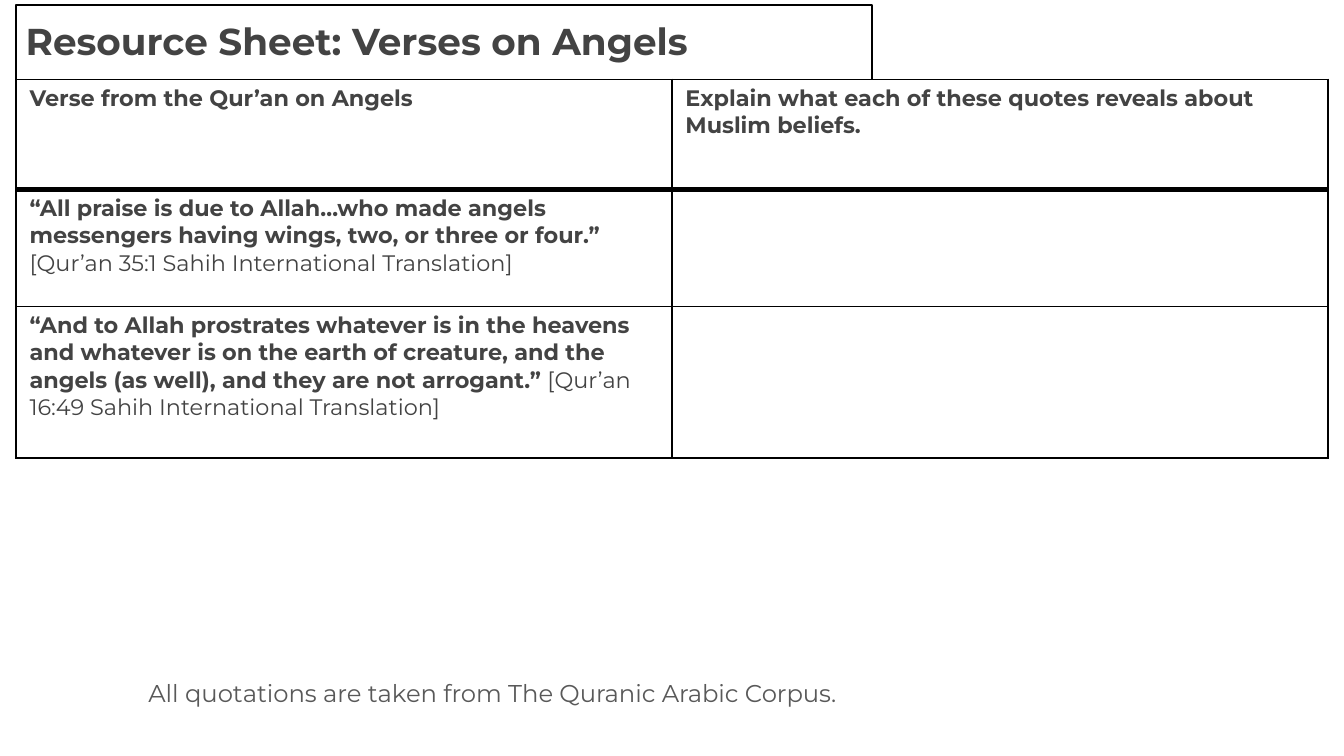
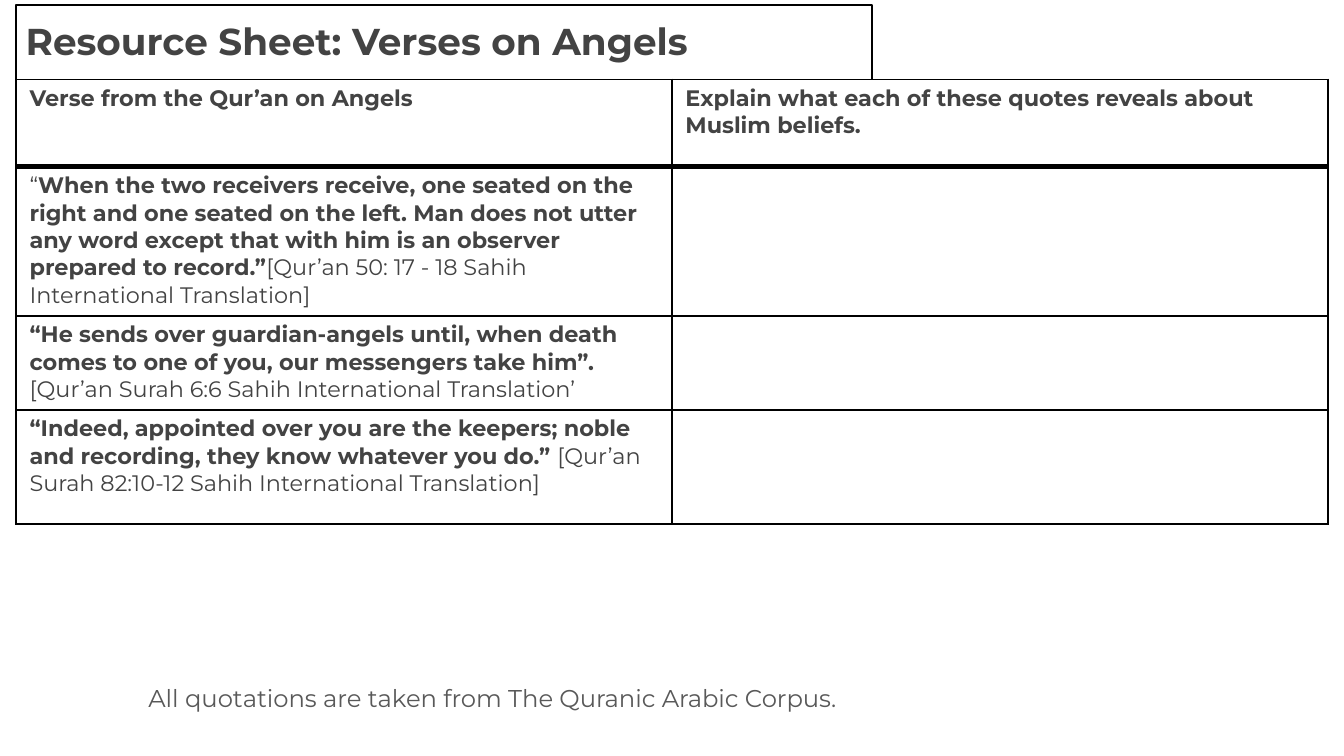
from dataclasses import dataclass

from lxml.etree import SubElement
from pptx import Presentation
from pptx.dml.color import RGBColor
from pptx.enum.text import MSO_ANCHOR, MSO_AUTO_SIZE, PP_ALIGN
from pptx.oxml.ns import qn
from pptx.util import Inches, Pt

# Shared style
COLORS = {"paper": "FFFFFF", "rule": "000000", "ink": "434343", "note": "595959"}
FONT = "Montserrat"
SLIDE_WIDTH = Inches(10)
SLIDE_HEIGHT = SLIDE_WIDTH * 9 // 16
LEFT = Inches(0.12)
COLUMN_WIDTH = Inches(4.88)
THIN, THICK = Pt(1), Pt(3)

# Shared wording
TITLE = "Resource Sheet: Verses on Angels"
HEADINGS = (
    "Verse from the Qur’an on Angels",
    "Explain what each of these quotes reveals about Muslim beliefs.",
)
SOURCE_NOTE = "All quotations are taken from The Quranic Arabic Corpus."


@dataclass(frozen=True)
class Verse:
    height: float
    quote: str
    reference: str
    opening: str = ""  # regular-weight text before the bold quote


@dataclass(frozen=True)
class Sheet:
    heading_height: float
    verses: tuple[Verse, ...]
    note_top: float


SHEETS = (
    Sheet(0.82, (
        Verse(
            0.87,
            "“All praise is due to Allah…who made angels messengers having wings, "
            "two, or three or four.”",
            " [Qur’an 35:1 Sahih International Translation]",
        ),
        Verse(
            1.13,
            "“And to Allah prostrates whatever is in the heavens and whatever is on "
            "the earth of creature, and the angels (as well), and they are not arrogant.”",
            " [Qur’an 16:49 Sahih International Translation]",
        ),
    ), 4.98),
    Sheet(0.65, (
        Verse(
            1.11,
            "When the two receivers receive, one seated on the right and one seated "
            "on the left. Man does not utter any word except that with him is an "
            "observer prepared to record.”",
            "[Qur’an 50: 17 - 18 Sahih International Translation]",
            opening="“",
        ),
        Verse(
            0.7,
            "“He sends over guardian-angels until, when death comes to one of you, "
            "our messengers take him”.",
            " [Qur’an Surah 6:6 Sahih International Translation’",
        ),
        Verse(
            0.85,
            "“Indeed, appointed over you are the keepers; noble and recording, they "
            "know whatever you do.” ",
            "[Qur’an Surah 82:10-12 Sahih International Translation]",
        ),
    ), 5.02),
)


def color(name: str) -> RGBColor:
    return RGBColor.from_string(COLORS[name])


def style_paragraph(paragraph, size: int, ink: str, bold: bool | None = None) -> None:
    paragraph.font.name = FONT
    paragraph.font.size = Pt(size)
    paragraph.font.color.rgb = color(ink)
    paragraph.font.bold = bold


def set_margins(target, horizontal: float, vertical: float) -> None:
    target.margin_left = target.margin_right = Inches(horizontal)
    target.margin_top = target.margin_bottom = Inches(vertical)


def style_cell(cell, top: Pt, bottom: Pt) -> None:
    properties = cell._tc.get_or_add_tcPr()
    for side, width in (("L", THIN), ("R", THIN), ("T", top), ("B", bottom)):
        border = SubElement(properties, qn(f"a:ln{side}"), w=str(int(width)))
        fill = SubElement(border, qn("a:solidFill"))
        SubElement(fill, qn("a:srgbClr"), val=COLORS["rule"])
    cell.fill.solid()
    cell.fill.fore_color.rgb = color("paper")
    set_margins(cell, 0.1, 0.04)


def add_title(slide) -> None:
    title = slide.shapes.title
    title.left, title.top = LEFT, Inches(0.04)
    title.width, title.height = Inches(6.37), Inches(0.56)
    title.fill.solid()
    title.fill.fore_color.rgb = color("paper")
    title.line.color.rgb = color("rule")
    title.line.width = THIN
    frame = title.text_frame
    frame.text = TITLE
    frame.auto_size = MSO_AUTO_SIZE.NONE
    frame.vertical_anchor = MSO_ANCHOR.MIDDLE
    set_margins(frame, 0.07, 0.04)
    heading = frame.paragraphs[0]
    heading.alignment = PP_ALIGN.LEFT
    heading.line_spacing = 0.9
    style_paragraph(heading, 20, "ink", bold=True)


def add_verse_table(slide, sheet: Sheet) -> None:
    heights = [sheet.heading_height, *(verse.height for verse in sheet.verses)]
    table = slide.shapes.add_table(
        len(heights), len(HEADINGS), LEFT, Inches(0.59),
        COLUMN_WIDTH * len(HEADINGS), Inches(sum(heights)),
    ).table
    table.first_row = table.horz_banding = False
    for column in table.columns:
        column.width = COLUMN_WIDTH

    # Row heights and rules, heavy below the headings
    for index, height in enumerate(heights):
        table.rows[index].height = Inches(height)
        for cell in table.rows[index].cells:
            style_cell(
                cell,
                top=THICK if index == 1 else THIN,
                bottom=THICK if index == 0 else THIN,
            )

    # Headings
    for cell, heading in zip(table.rows[0].cells, HEADINGS):
        cell.text = heading
        style_paragraph(cell.text_frame.paragraphs[0], 12, "ink", bold=True)

    # Verses, with the right column left free for answers
    for row, verse in enumerate(sheet.verses, start=1):
        paragraph = table.cell(row, 0).text_frame.paragraphs[0]
        style_paragraph(paragraph, 12, "ink")
        parts = ((verse.opening, False), (verse.quote, True), (verse.reference, False))
        for text, bold in parts:
            if text:
                run = paragraph.add_run()
                run.text = text
                run.font.bold = bold


def add_source_note(slide, top: float) -> None:
    note = slide.shapes.add_textbox(LEFT, Inches(top), Inches(7.08), Inches(0.33))
    frame = note.text_frame
    frame.word_wrap = True
    set_margins(frame, 0, 0)
    frame.text = SOURCE_NOTE
    paragraph = frame.paragraphs[0]
    paragraph.alignment = PP_ALIGN.CENTER
    paragraph.line_spacing = 1.3
    style_paragraph(paragraph, 13, "note")


def main() -> None:
    presentation = Presentation()
    presentation.slide_width = SLIDE_WIDTH
    presentation.slide_height = SLIDE_HEIGHT
    title_only = presentation.slide_layouts.get_by_name("Title Only")
    for sheet in SHEETS:
        slide = presentation.slides.add_slide(title_only)
        add_title(slide)
        add_verse_table(slide, sheet)
        add_source_note(slide, sheet.note_top)
    presentation.save("out.pptx")


if __name__ == "__main__":
    main()
